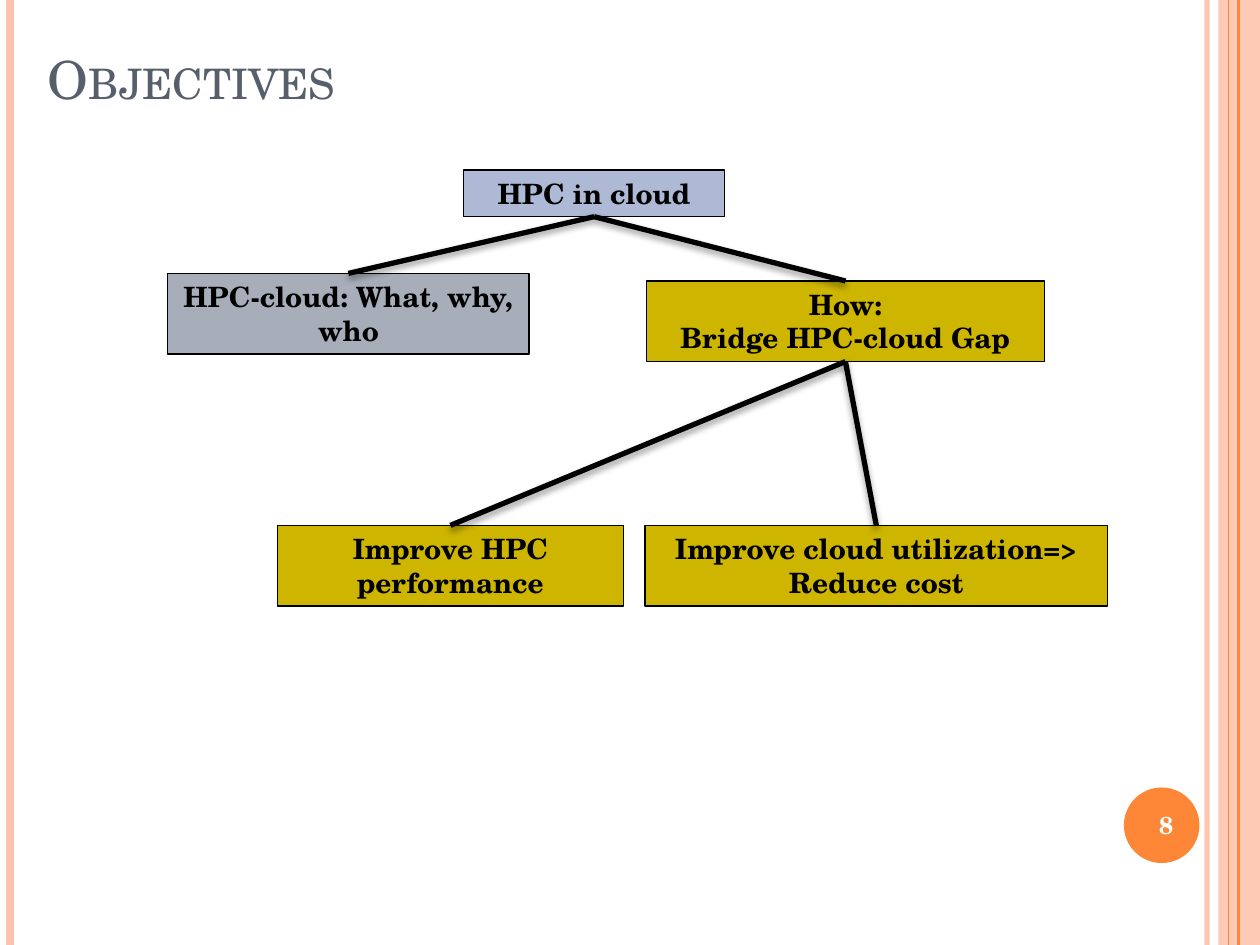
import pptx
import pptx.util
import pptx.dml.color
import pptx.enum.shapes
import pptx.enum.text
import pptx.oxml.ns
from lxml import etree
from pptx.util import Inches

THEME = {
    "font": "TeX Gyre Schola",
    "title_size": 30, "box_size": 16, "number_size": 14,
    "title": "575F6D", "text": "000000", "white": "FFFFFF",
    "orange": "FE8637", "peach": "FEC3AE",
    "blue": "AEBAD5", "gray": "A8AEB9", "gold": "CEB500",
}
SLIDE_W, SLIDE_H = 10, 7.5
TITLE = "Objectives"
PAGE = "8"

# x, colour, width in points, opacity in percent
STRIPES = [
    (9.58, "peach", 3, 93),
    (0.08, "peach", 4.5, 100),
    (9.83, "orange", 1.5, 100),
    (9.75, "orange", 0.75, 100),
]
# name: (paragraphs, colour, left, top, width, height)
BOXES = {
    "root": (["HPC in cloud"], "blue", 3.68, 1.35, 2.07, 0.37),
    "what": (["HPC-cloud: What, why, who"], "gray", 1.33, 2.17, 2.87, 0.64),
    "how": (["How:", "Bridge HPC-cloud Gap"], "gold", 5.13, 2.23, 3.16, 0.64),
    "hpc": (["Improve HPC performance"], "gold", 2.2, 4.17, 2.75, 0.64),
    "cloud": (["Improve cloud utilization=> Reduce cost"], "gold", 5.12, 4.17, 3.67, 0.64),
}
LINKS = [("root", "what"), ("root", "how"), ("how", "hpc"), ("how", "cloud")]
BOTTOM, TOP = 2, 0

SHAPE = pptx.enum.shapes.MSO_SHAPE
ANCHOR = pptx.enum.text.MSO_ANCHOR
ALIGN = pptx.enum.text.PP_ALIGN
qn = pptx.oxml.ns.qn


def color(name):
    return pptx.dml.color.RGBColor.from_string(THEME[name])


def set_opacity(shape, percent):
    clr = shape._element.spPr.find(".//" + qn("a:srgbClr"))
    etree.SubElement(clr, qn("a:alpha"), val=str(percent * 1000))


def write(shape, paragraphs, size, ink, align=ALIGN.CENTER, anchor=ANCHOR.MIDDLE, bold=True):
    tf = shape.text_frame
    tf.word_wrap = True
    tf.vertical_anchor = anchor
    tf.text = "\n".join(paragraphs)
    for p in tf.paragraphs:
        p.alignment = align
        p.font.name = THEME["font"]
        p.font.size = pptx.util.Pt(THEME[size])
        p.font.bold = bold
        p.font.color.rgb = color(ink)


def add_filled(s, kind, fill, *box):
    sp = s.shapes.add_shape(kind, *map(Inches, box))
    sp.shadow.inherit = False
    sp.fill.solid()
    sp.fill.fore_color.rgb = color(fill)
    sp.line.fill.background()
    return sp


def add_line(s, ends, ink, width):
    """Add a straight line and return it with its empty effect list."""
    line = s.shapes.add_connector(pptx.enum.shapes.MSO_CONNECTOR.STRAIGHT, *map(Inches, ends))
    line.line.color.rgb = color(ink)
    line.line.width = pptx.util.Pt(width)
    return line, etree.SubElement(line._element.spPr, qn("a:effectLst"))


def add_frame(s):
    for x, ink, width, opacity in STRIPES:
        line, _ = add_line(s, (x, 0, x, SLIDE_H), ink, width)
        if opacity < 100:
            set_opacity(line, opacity)
    band = add_filled(s, SHAPE.RECTANGLE, "peach", 9.67, 0, 0.33, SLIDE_H)
    set_opacity(band, 87)
    # the band lies behind the two thin orange stripes
    s.shapes._spTree.remove(band._element)
    s.shapes._spTree.insert(2, band._element)
    add_filled(s, SHAPE.OVAL, "orange", 8.92, 6.25, 0.6, 0.6)
    number = s.shapes.add_textbox(*map(Inches, (8.92, 6.26, 0.67, 0.57)))
    write(number, [PAGE], "number_size", "white")


def add_title(s):
    title = s.shapes.title
    title.left, title.top, title.width, title.height = map(Inches, (0.28, -0.08, 8.8, 1))
    write(title, [TITLE], "title_size", "title", ALIGN.LEFT, ANCHOR.BOTTOM, False)
    title.text_frame.paragraphs[0].runs[0].font._element.set("cap", "small")


def add_tree(s):
    nodes = {}
    for name, (paragraphs, fill, *box) in BOXES.items():
        sp = nodes[name] = add_filled(s, SHAPE.RECTANGLE, fill, *box)
        sp.line.color.rgb = color("text")
        sp.line.width = pptx.util.Pt(0.75)
        write(sp, paragraphs, "box_size", "text", anchor=ANCHOR.TOP)
    for parent, child in LINKS:
        line, effects = add_line(s, (0, 0, 0, 0), "text", 3)
        line.begin_connect(nodes[parent], BOTTOM)
        line.end_connect(nodes[child], TOP)
        shadow = etree.SubElement(
            effects, qn("a:outerShdw"), blurRad=str(pptx.util.Pt(4)),
            dist=str(pptx.util.Pt(2)), dir="5400000", rotWithShape="0")
        clr = etree.SubElement(shadow, qn("a:srgbClr"), val=THEME["text"])
        etree.SubElement(clr, qn("a:alpha"), val="40000")


def main():
    prs = pptx.Presentation()
    prs.slide_width, prs.slide_height = Inches(SLIDE_W), Inches(SLIDE_H)
    s = prs.slides.add_slide(prs.slide_layouts[5])
    add_frame(s)
    add_title(s)
    add_tree(s)
    prs.save("out.pptx")


if __name__ == "__main__":
    main()
